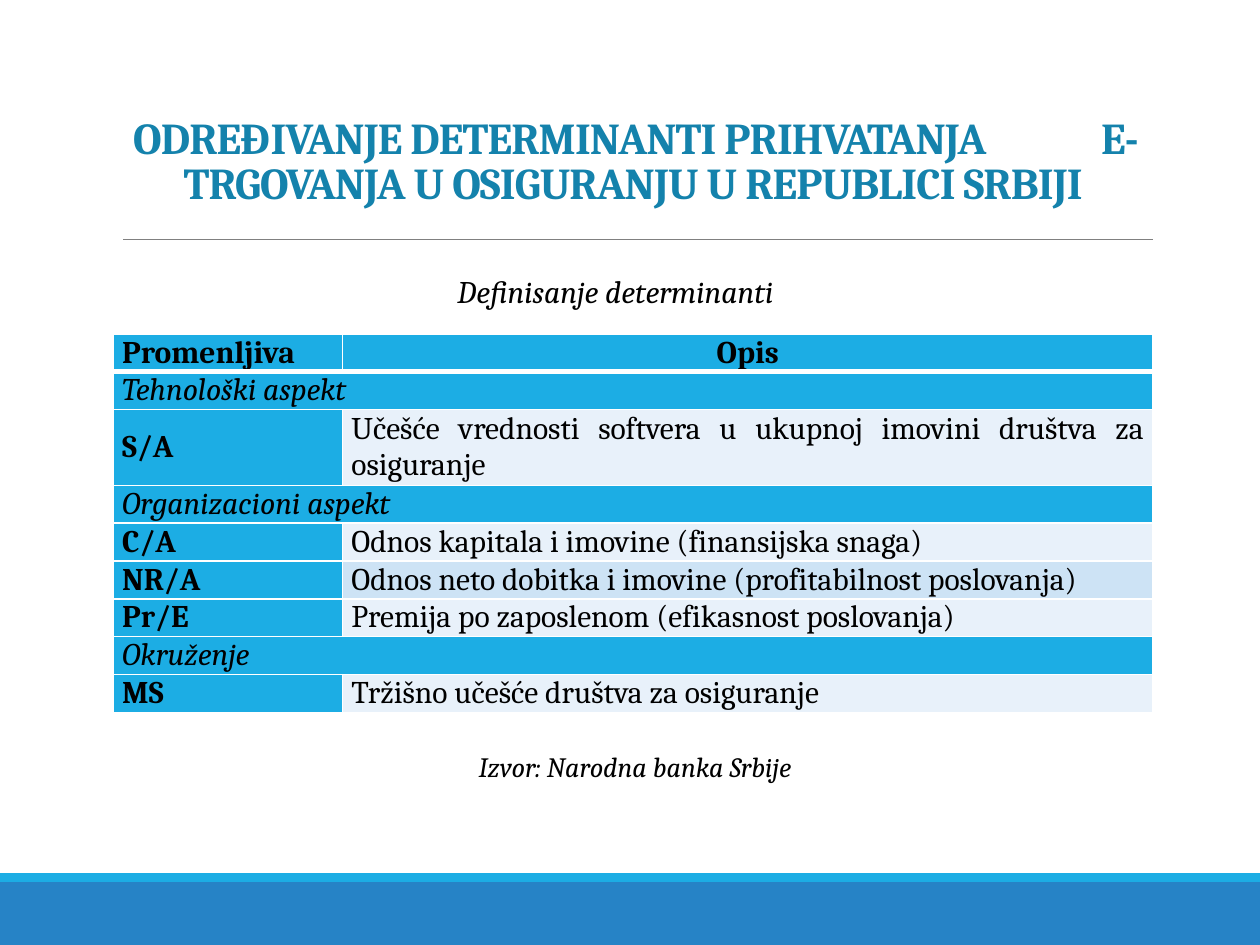
from lxml import etree
from pptx import Presentation
from pptx.dml.color import RGBColor
from pptx.enum.shapes import MSO_CONNECTOR, MSO_SHAPE
from pptx.enum.text import MSO_ANCHOR, PP_ALIGN
from pptx.oxml.ns import qn
from pptx.util import Inches, Pt

RECTANGLE = MSO_SHAPE.RECTANGLE
STRAIGHT = MSO_CONNECTOR.STRAIGHT
CENTER, JUSTIFY = PP_ALIGN.CENTER, PP_ALIGN.JUSTIFY
MIDDLE, BOTTOM = MSO_ANCHOR.MIDDLE, MSO_ANCHOR.BOTTOM

FONT = "Cambria"
WHITE, BLACK, GRAY = "FFFFFF", "000000", "808080"
TITLE_BLUE, DARK_BLUE, ACCENT = "1482AC", "2683C6", "1CADE4"
LIGHT_BAND, DARK_BAND = "E8F1FA", "CDE3F5"

# Slide grid: table and title share their left and right edges
WIDTH, HEIGHT = 10, 7.5
LEFT, CONTENT_WIDTH = 0.9, 8.25
FOOTER_TOP, STRIPE_HEIGHT = 7, 0.07
COLUMN_WIDTHS = (1.82, 6.43)
ROW_HEIGHT = 0.3

# Rows: variable, description, lines of text; no description means a section
ROWS = [
    ("Promenljiva", "Opis", 1),
    ("Tehnološki aspekt", None, 1),
    ("S/A", "Učešće vrednosti softvera u ukupnoj imovini društva za osiguranje", 2),
    ("Organizacioni aspekt", None, 1),
    ("C/A", "Odnos kapitala i imovine (finansijska snaga)", 1),
    ("NR/A", "Odnos neto dobitka i imovine (profitabilnost poslovanja)", 1),
    ("Pr/E", "Premija po zaposlenom (efikasnost poslovanja)", 1),
    ("Okruženje", None, 1),
    ("MS", "Tržišno učešće društva za osiguranje", 1),
]


def color(hex_string):
    return RGBColor.from_string(hex_string)


def add_run(paragraph, text, size, hex_color=BLACK, bold=False, italic=False, spacing=None):
    run = paragraph.add_run()
    run.text = text
    font = run.font
    font.name, font.size = FONT, Pt(size)
    font.bold, font.italic = bold, italic
    font.color.rgb = color(hex_color)
    if spacing is not None:
        run._r.get_or_add_rPr().set("spc", str(round(spacing * 100)))


def add_rectangle(slide, left, top, width, height, fill):
    shape = slide.shapes.add_shape(
        RECTANGLE, Inches(left), Inches(top), Inches(width), Inches(height))
    shape.shadow.inherit = False
    shape.fill.solid()
    shape.fill.fore_color.rgb = color(fill)
    shape.line.fill.background()
    return shape


def add_caption(slide, left, top, width, height, text, size):
    shape = add_rectangle(slide, left, top, width, height, WHITE)
    frame = shape.text_frame
    frame.word_wrap = True
    frame.vertical_anchor = MIDDLE
    paragraph = frame.paragraphs[0]
    paragraph.alignment = CENTER
    add_run(paragraph, text, size, italic=True)


def add_title(slide):
    box = slide.shapes.add_textbox(
        Inches(LEFT), Inches(0.88), Inches(CONTENT_WIDTH), Inches(0.82))
    frame = box.text_frame
    frame.word_wrap = True
    frame.vertical_anchor = BOTTOM
    paragraph = frame.paragraphs[0]
    paragraph.alignment = CENTER
    paragraph.line_spacing = 0.85
    # The wide gap is one space with expanded character spacing
    for text, spacing in (
        ("ODREĐIVANJE DETERMINANTI PRIHVATANJA", -0.5),
        (" ", 60),
        ("E-TRGOVANJA U OSIGURANJU U REPUBLICI SRBIJI", -0.5),
    ):
        add_run(paragraph, text, 25.2, TITLE_BLUE, bold=True, spacing=spacing)


def add_rule(slide, left, right, y):
    line = slide.shapes.add_connector(
        STRAIGHT, Inches(left), Inches(y), Inches(right), Inches(y))
    line.line.color.rgb = color(GRAY)
    line.line.width = Pt(0.5)
    etree.SubElement(line._element.spPr, qn("a:effectLst"))


def set_borders(cell, top, bottom):
    properties = cell._tc.get_or_add_tcPr()
    widths = {"lnL": 1, "lnR": 1, "lnT": top, "lnB": bottom}
    for position, (side, width) in enumerate(widths.items()):
        border = etree.Element(qn(f"a:{side}"), w=str(Pt(width)))
        fill = etree.SubElement(border, qn("a:solidFill"))
        etree.SubElement(fill, qn("a:srgbClr"), val=WHITE)
        properties.insert(position, border)


def style_cell(cell, fill, row):
    cell.fill.solid()
    cell.fill.fore_color.rgb = color(fill)
    cell.vertical_anchor = MIDDLE
    cell.margin_left = cell.margin_right = Inches(0.07)
    cell.margin_top = cell.margin_bottom = 0
    # A thick line divides the header from the body
    set_borders(cell, top=3 if row == 1 else 1, bottom=3 if row == 0 else 1)


def write_cell(cell, text, alignment=JUSTIFY, bold=False, italic=False):
    paragraph = cell.text_frame.paragraphs[0]
    paragraph.alignment = alignment
    add_run(paragraph, text, 18, bold=bold, italic=italic)


def add_determinants_table(slide):
    total_height = ROW_HEIGHT * sum(lines for _, _, lines in ROWS)
    table = slide.shapes.add_table(
        len(ROWS), len(COLUMN_WIDTHS), Inches(LEFT), Inches(2.65),
        Inches(CONTENT_WIDTH), Inches(total_height)).table
    for column, width in zip(table.columns, COLUMN_WIDTHS):
        column.width = Inches(width)

    for index, (variable, description, lines) in enumerate(ROWS):
        table.rows[index].height = Inches(ROW_HEIGHT * lines)
        first, second = table.cell(index, 0), table.cell(index, 1)
        header, section = index == 0, description is None
        band = DARK_BAND if index % 2 else LIGHT_BAND
        style_cell(first, ACCENT, index)
        style_cell(second, ACCENT if header or section else band, index)
        write_cell(first, variable, bold=not section, italic=section)
        if section:
            first.merge(second)
        else:
            write_cell(second, description, CENTER if header else JUSTIFY, bold=header)


def main():
    presentation = Presentation()
    presentation.slide_width, presentation.slide_height = Inches(WIDTH), Inches(HEIGHT)
    slide = presentation.slides.add_slide(presentation.slide_layouts[6])

    # Footer bands and title rule
    add_rectangle(slide, 0, FOOTER_TOP, WIDTH, HEIGHT - FOOTER_TOP, DARK_BLUE)
    add_rectangle(slide, 0, FOOTER_TOP - STRIPE_HEIGHT, WIDTH, STRIPE_HEIGHT, ACCENT)
    add_rule(slide, 0.98, LEFT + CONTENT_WIDTH, 1.9)

    # Content
    add_title(slide)
    add_caption(slide, 0.91, 2.11, 7.95, 0.4, "Definisanje determinanti", 18)
    add_determinants_table(slide)
    add_caption(slide, 0.59, 5.9, 8.9, 0.37, "Izvor: Narodna banka Srbije", 16)

    presentation.save("out.pptx")


if __name__ == "__main__":
    main()
